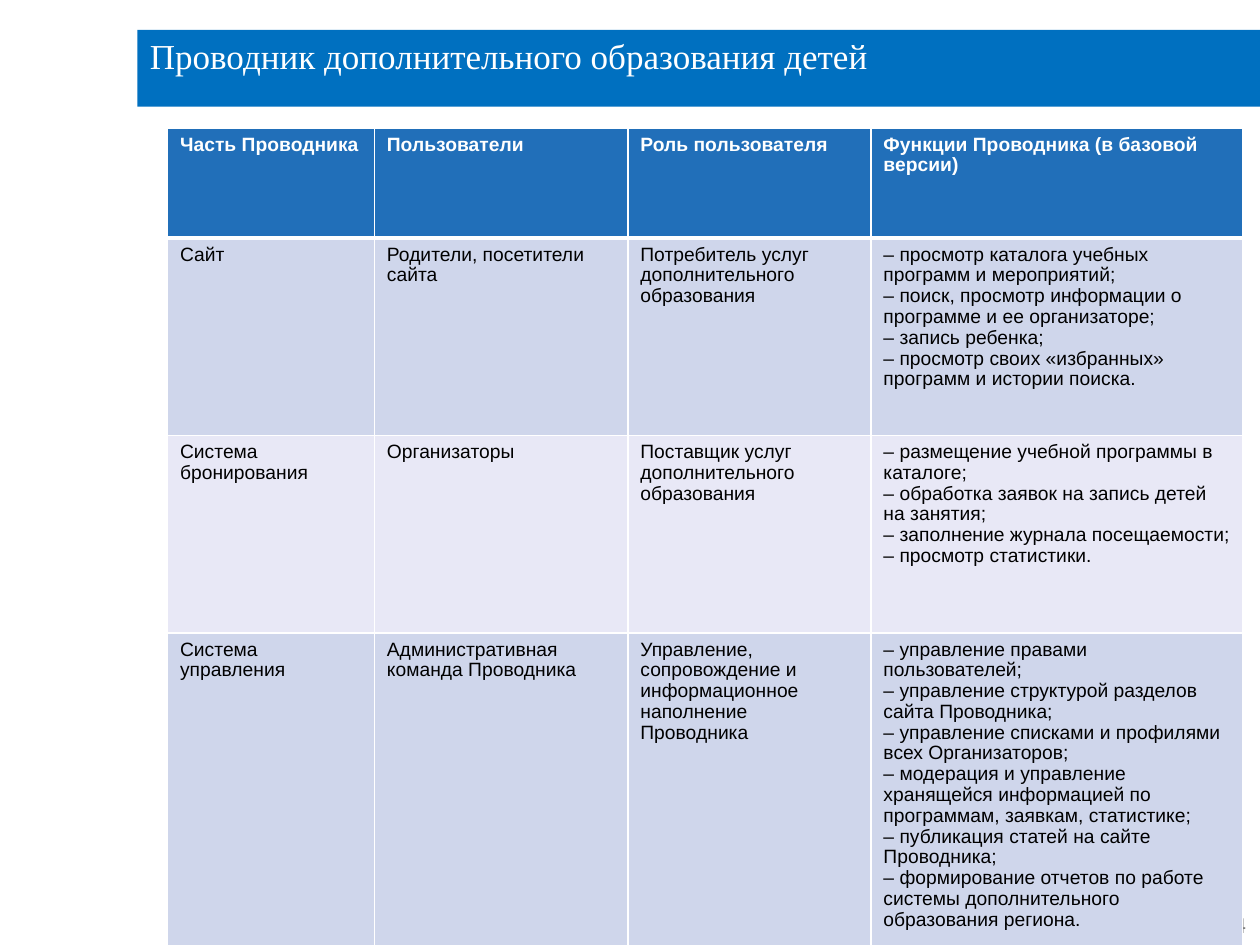
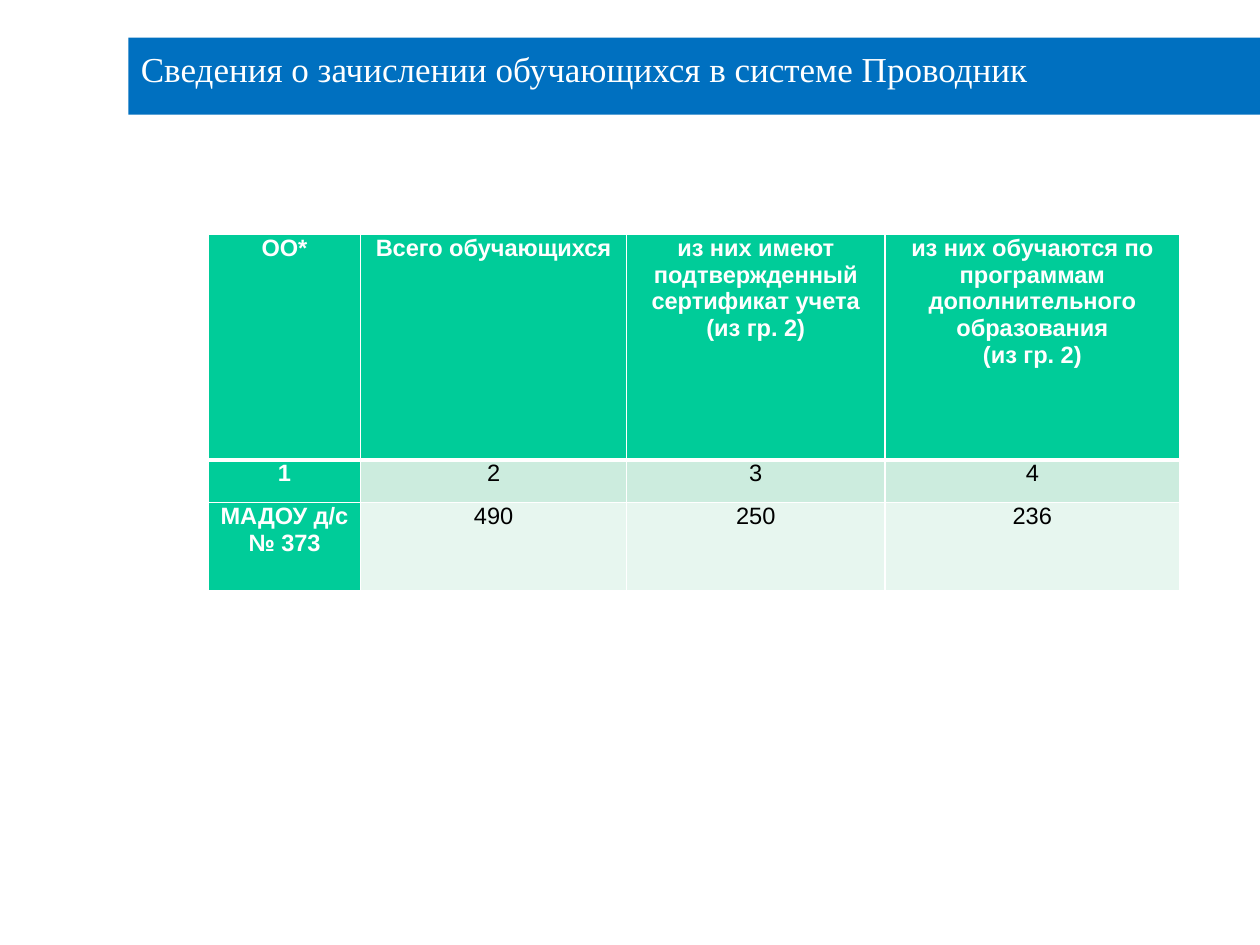
from lxml.etree import SubElement
from pptx import Presentation
from pptx.dml.color import RGBColor
from pptx.enum.text import MSO_ANCHOR, MSO_AUTO_SIZE, PP_ALIGN
from pptx.oxml.ns import qn
from pptx.util import Cm, Pt

WHITE = RGBColor(0xFF, 0xFF, 0xFF)
BLACK = RGBColor(0x00, 0x00, 0x00)
GREY = RGBColor(0x7F, 0x7F, 0x7F)
BAND = RGBColor(0x00, 0x70, 0xC0)
BLUE = RGBColor(0x21, 0x6F, 0xB9)
BLUE_ROWS = [RGBColor(0xCF, 0xD6, 0xEB), RGBColor(0xE8, 0xE8, 0xF6)]
GREEN = RGBColor(0x00, 0xCC, 0x99)
GREEN_ROWS = [RGBColor(0xCC, 0xEC, 0xDE), RGBColor(0xE7, 0xF6, 0xEF)]

WIDTH, HEIGHT = 25.4, 19.05

PARTS = [
    ["Часть Проводника", "Пользователи", "Роль пользователя",
     "Функции Проводника (в базовой версии)"],
    ["Сайт", "Родители, посетители сайта",
     "Потребитель услуг дополнительного образования",
     "– просмотр каталога учебных программ и мероприятий;\n"
     "– поиск, просмотр информации о программе и ее организаторе;\n"
     "– запись ребенка;\n"
     "– просмотр своих «избранных» программ и истории поиска."],
    ["Система бронирования", "Организаторы",
     "Поставщик услуг дополнительного образования",
     "– размещение учебной программы в каталоге;\n"
     "– обработка заявок на запись детей на занятия;\n"
     "– заполнение журнала посещаемости;\n"
     "– просмотр статистики."],
    ["Система управления", "Административная команда Проводника",
     "Управление, сопровождение и информационное наполнение Проводника",
     "– управление правами пользователей;\n"
     "– управление структурой разделов сайта Проводника;\n"
     "– управление списками и профилями всех Организаторов;\n"
     "– модерация и управление хранящейся информацией по программам, "
     "заявкам, статистике;\n"
     "– публикация статей на сайте Проводника;\n"
     "– формирование отчетов по работе системы дополнительного "
     "образования региона."],
]
COUNTS = [
    ["ОО*", "Всего обучающихся",
     "из них имеют подтвержденный сертификат учета\n(из гр. 2)",
     "из них обучаются по программам дополнительного образования\n(из гр. 2)"],
    ["1", "2", "3", "4"],
    ["МАДОУ д/с № 373", "490", "250", "236"],
]


def write(frame, text, size=11, font="Arial", color=BLACK, bold=False,
          align=PP_ALIGN.LEFT, space=1.0, pad=(0.25, 0.13)):
    """Fill a text frame or cell; pad is the side and top inset in cm."""
    frame.margin_left = frame.margin_right = Cm(pad[0])
    frame.margin_top = frame.margin_bottom = Cm(pad[1])
    frame.vertical_anchor = MSO_ANCHOR.TOP
    body = getattr(frame, "text_frame", frame)
    body.word_wrap = True
    body.text = text
    for para in body.paragraphs:
        para.alignment = align
        para.line_spacing = space
        for run in para.runs:
            run.font.size = Pt(size)
            run.font.name = font
            run.font.bold = bold
            run.font.color.rgb = color


def add_title(slide, text, left, top, inset):
    """Blue band that runs to the right edge of the slide."""
    title = slide.shapes.title
    title.left, title.top = Cm(left), Cm(top)
    title.width, title.height = Cm(WIDTH - left), Cm(1.55)
    title.fill.solid()
    title.fill.fore_color.rgb = BAND
    write(title.text_frame, text, size=20, font="Times New Roman",
          color=WHITE, pad=(0.25, inset))
    title.text_frame.auto_size = MSO_AUTO_SIZE.NONE


def add_number(slide, text, left, top, width, height):
    box = slide.shapes.add_textbox(Cm(left), Cm(top), Cm(width), Cm(height))
    write(box.text_frame, text, size=12, font="Cabin", color=GREY,
          align=PP_ALIGN.RIGHT)


def edge(cell, base):
    """White borders, with the given bottom width in points."""
    props = cell._tc.get_or_add_tcPr()
    for tag, size in (("a:lnL", 1), ("a:lnR", 1), ("a:lnT", 1), ("a:lnB", base)):
        line = SubElement(props, qn(tag), w=str(Pt(size)))
        fill = SubElement(line, qn("a:solidFill"))
        SubElement(fill, qn("a:srgbClr"), val=str(WHITE))


def add_grid(slide, data, left, top, cols, rows, head, bands,
             lead=False, **style):
    """Banded table; lead gives the first column the header look."""
    frame = slide.shapes.add_table(len(rows), len(cols), Cm(left), Cm(top),
                                   Cm(sum(cols)), Cm(sum(rows)))
    table = frame.table
    table.horz_banding = False
    table.first_row = False
    for col, width in zip(table.columns, cols):
        col.width = Cm(width)
    for r, (row, high) in enumerate(zip(data, rows)):
        table.rows[r].height = Cm(high)
        for c, text in enumerate(row):
            cell = table.cell(r, c)
            strong = r == 0 or (lead and c == 0)
            edge(cell, 3 if r == 0 else 1)
            cell.fill.solid()
            cell.fill.fore_color.rgb = head if strong else bands[(r - 1) % 2]
            write(cell, text, bold=strong,
                  color=WHITE if strong else BLACK, **style)


def draw_parts(slide):
    add_title(slide, "Проводник дополнительного образования детей",
              2.77, 0.6, 0.1)
    add_number(slide, "14", 23.83, 18.26, 1.55, 0.76)
    add_grid(slide, PARTS, 3.38, 2.58, [4.17, 5.11, 4.9, 7.49],
             [2.22, 3.98, 3.98, 6.3], BLUE, BLUE_ROWS, space=0.97)


def draw_counts(slide):
    add_title(slide, "Сведения о зачислении обучающихся в системе Проводник",
              2.59, 0.76, 0.2)
    add_grid(slide, COUNTS, 4.2, 4.73, [3.07, 5.36, 5.21, 5.94],
             [4.54, 0.86, 1.78], GREEN, GREEN_ROWS, lead=True,
             size=13.5, align=PP_ALIGN.CENTER, space=1.02, pad=(0.18, 0))


def main():
    deck = Presentation()
    deck.slide_width, deck.slide_height = Cm(WIDTH), Cm(HEIGHT)
    for draw in (draw_parts, draw_counts):
        draw(deck.slides.add_slide(deck.slide_layouts[5]))
    deck.save("out.pptx")


if __name__ == "__main__":
    main()
